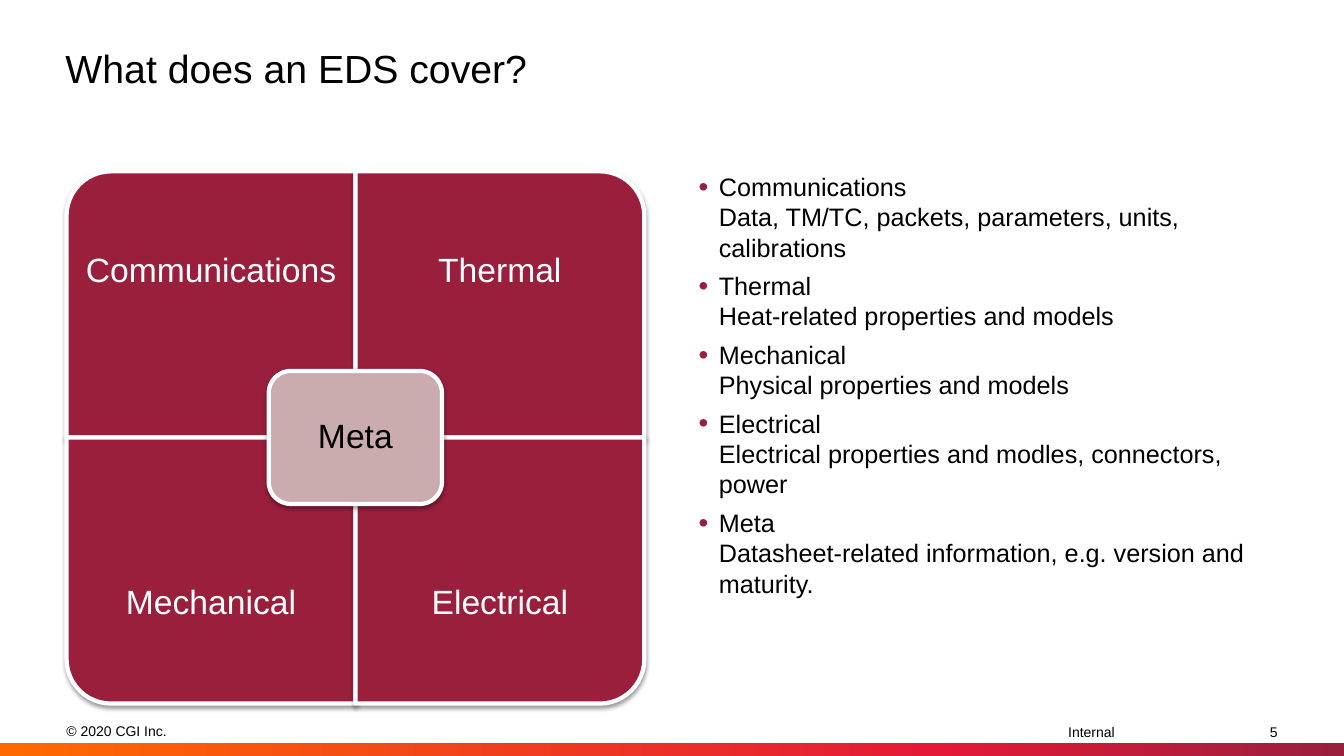
from dataclasses import dataclass

from lxml import etree
from pptx import Presentation
from pptx.dml.color import RGBColor
from pptx.enum.shapes import MSO_SHAPE
from pptx.enum.text import MSO_ANCHOR, PP_ALIGN
from pptx.oxml import parse_xml
from pptx.oxml.ns import nsdecls, qn
from pptx.util import Emu, Pt

RECT = MSO_SHAPE.RECTANGLE
ROUND = MSO_SHAPE.ROUNDED_RECTANGLE
CORNER = MSO_SHAPE.ROUND_1_RECTANGLE
TOP, MIDDLE = MSO_ANCHOR.TOP, MSO_ANCHOR.MIDDLE
LEFT, CENTER, RIGHT = PP_ALIGN.LEFT, PP_ALIGN.CENTER, PP_ALIGN.RIGHT


@dataclass(frozen=True)
class Theme:
    font: str = "Arial"
    black: str = "000000"
    white: str = "FFFFFF"
    wine: str = "991F3D"
    red: str = "E31937"
    orange: str = "FF6A00"
    rose: str = "CAACAF"
    title: int = 28
    label: int = 24
    body: int = 18
    small: int = 10


THEME = Theme()
TOPICS = [
    ("Communications", "Data, TM/TC, packets, parameters, units, calibrations"),
    ("Thermal", "Heat-related properties and models"),
    ("Mechanical", "Physical properties and models"),
    ("Electrical", "Electrical properties and modles, connectors, power"),
    ("Meta", "Datasheet-related information, e.g. version and maturity."),
]
TURNS = [270, 0, 180, 90]


def px(count):
    return Emu(round(count * 9144))


def place(box):
    return [px(side) for side in box]


def style(para, size, color, align):
    para.alignment = align
    para.font.name = THEME.font
    para.font.size = Pt(size)
    para.font.color.rgb = RGBColor.from_string(color)


def setup(frame, anchor, inset=0, wrap=True):
    frame.word_wrap = wrap
    frame.vertical_anchor = anchor
    frame.margin_left = frame.margin_right = px(inset)
    frame.margin_top = frame.margin_bottom = px(inset)


def write(slide, box, text, size, color=THEME.black, align=LEFT, anchor=TOP, wrap=True):
    frame = slide.shapes.add_textbox(*place(box)).text_frame
    setup(frame, anchor, wrap=wrap)
    para = frame.paragraphs[0]
    para.text = text
    style(para, size, color, align)
    return para


def add_tile(slide, kind, box, fill):
    tile = slide.shapes.add_shape(kind, *place(box))
    tile.fill.solid()
    tile.fill.fore_color.rgb = RGBColor.from_string(fill)
    tile.line.color.rgb = RGBColor.from_string(THEME.white)
    tile.line.width = Pt(3)
    tile.shadow.inherit = False
    tile._element.spPr.find(qn("a:effectLst")).append(parse_xml(
        f'<a:outerShdw {nsdecls("a")} blurRad="39370" dist="20320" dir="5400000" '
        f'rotWithShape="0"><a:srgbClr val="{THEME.black}"><a:alpha val="38000"/>'
        '</a:srgbClr></a:outerShdw>'))
    return tile


def add_band(slide, box):
    band = slide.shapes.add_shape(RECT, *place(box))
    band.shadow.inherit = False
    band.line.fill.background()
    band.fill.gradient()
    grad = band._element.spPr.find(qn("a:gradFill"))
    stops = [(0, THEME.wine), (30, THEME.red), (100, THEME.orange)]
    marks = "".join(
        f'<a:gs pos="{pos * 1000}"><a:srgbClr val="{color}"/></a:gs>'
        for pos, color in stops)
    grad.getparent().replace(grad, parse_xml(
        f'<a:gradFill {nsdecls("a")} rotWithShape="1"><a:gsLst>{marks}</a:gsLst>'
        '<a:lin ang="10800000" scaled="0"/></a:gradFill>'))


def add_footer(slide, box):
    left, top, width, height = box
    add_band(slide, (left, top + height - 13, width, 13))
    write(slide, (left + 66, top, 210, 19), "© 2020 CGI Inc.", THEME.small,
          anchor=MIDDLE, wrap=False)
    write(slide, (left + 1004, top + 2, 157, 19), "Internal", THEME.small, align=CENTER)
    write(slide, (left + 1238, top + 1, 29, 19), "5", THEME.small,
          align=RIGHT, anchor=MIDDLE)


def add_list(slide, box):
    frame = slide.shapes.add_textbox(*place(box)).text_frame
    setup(frame, TOP)
    for index, topic in enumerate(TOPICS):
        para = frame.add_paragraph() if index else frame.paragraphs[0]
        para.text = "\v".join(topic)
        props = para._p.get_or_add_pPr()
        props.set("marL", str(px(20)))
        props.set("indent", str(-px(20)))
        if index:
            para.space_before = Pt(6)
        color = etree.SubElement(props, qn("a:buClr"))
        etree.SubElement(color, qn("a:srgbClr"), val=THEME.wine)
        etree.SubElement(props, qn("a:buSzPct"), val="110000")
        etree.SubElement(props, qn("a:buFont"), typeface=THEME.font)
        etree.SubElement(props, qn("a:buChar"), char="•")
        style(para, THEME.body, THEME.black, LEFT)


def add_matrix(slide, box):
    left, top, width, height = box
    wide, high = width / 2, height / 2
    names = [name for name, _ in TOPICS]
    for index, turn in enumerate(TURNS):
        row, col = divmod(index, 2)
        x, y = left + col * wide, top + row * high
        across, down = (high, wide) if turn % 180 else (wide, high)
        tile = add_tile(slide, CORNER, (x + (wide - across) / 2,
                        y + (high - down) / 2, across, down), THEME.wine)
        tile.rotation = turn
        para = write(slide, (x + 15, y + row * high / 4, wide - 30, high * 3 / 4),
                     names[index], THEME.label, THEME.white, CENTER, MIDDLE)
        para.line_spacing = 0.9
    core = add_tile(slide, ROUND, (left + width * 0.35, top + height * 0.375,
                    width * 0.3, height / 4), THEME.rose)
    setup(core.text_frame, MIDDLE, 10)
    para = core.text_frame.paragraphs[0]
    para.text = names[-1]
    para.line_spacing = 0.9
    style(para, THEME.label, THEME.black, CENTER)


def main():
    deck = Presentation()
    deck.slide_width, deck.slide_height = px(1333), px(750)
    slide = deck.slides.add_slide(deck.slide_layouts[6])
    add_footer(slide, (0, 716, 1333, 34))
    write(slide, (65, 44, 1200, 102), "What does an EDS cover?", THEME.title)
    add_list(slide, (693, 170, 572, 528))
    add_matrix(slide, (66, 170, 573, 528))
    deck.save("out.pptx")


if __name__ == "__main__":
    main()
